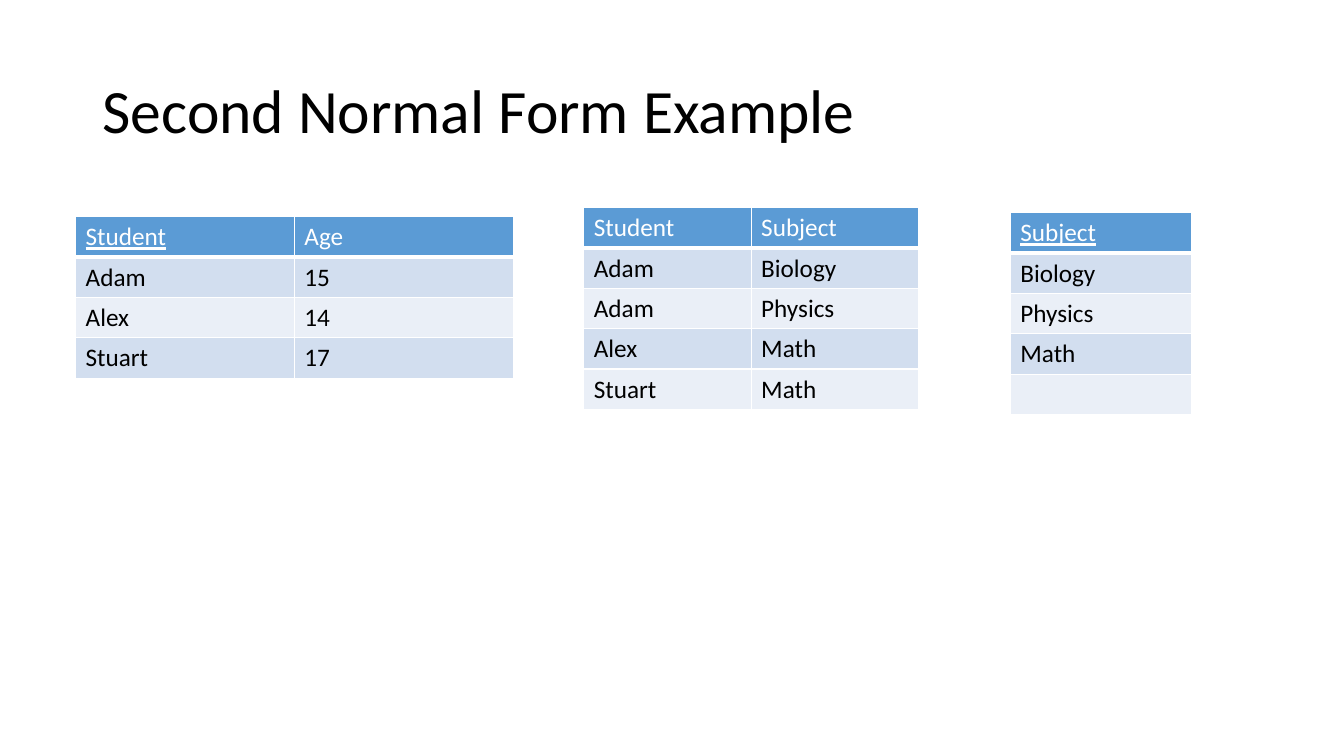
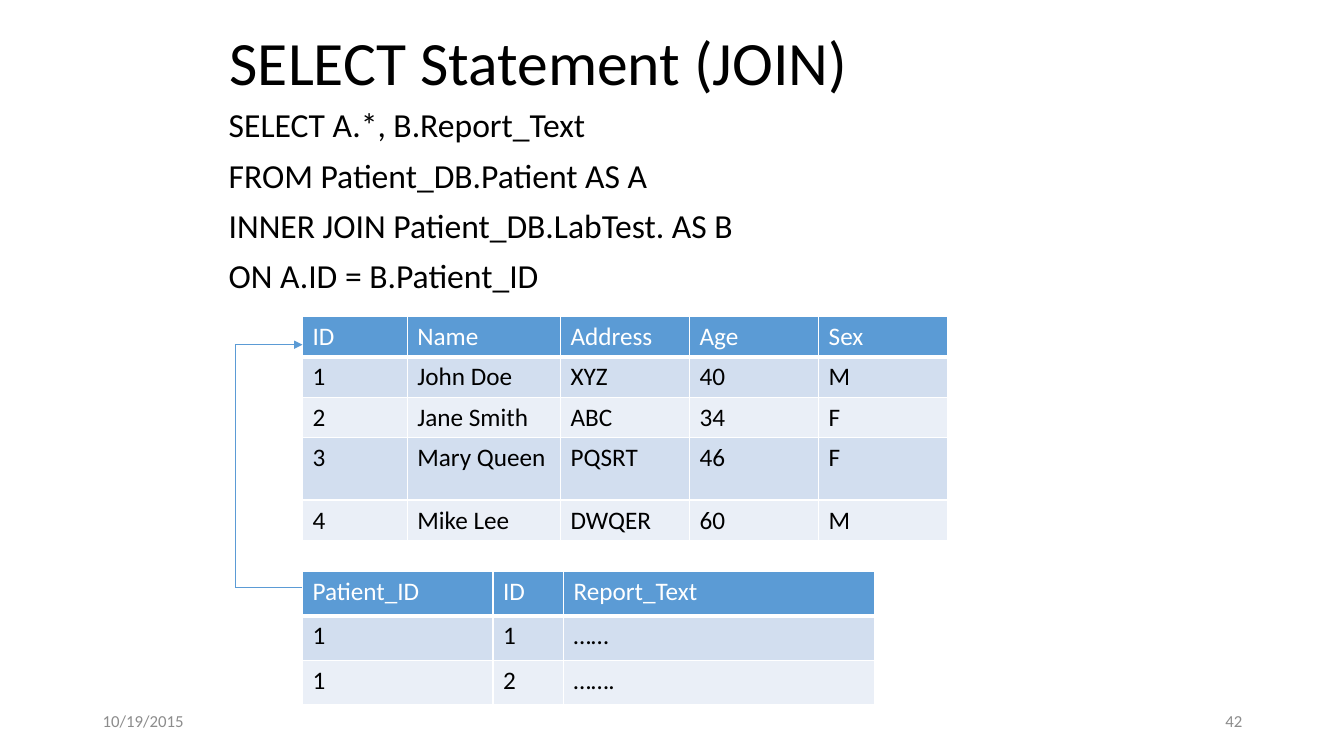
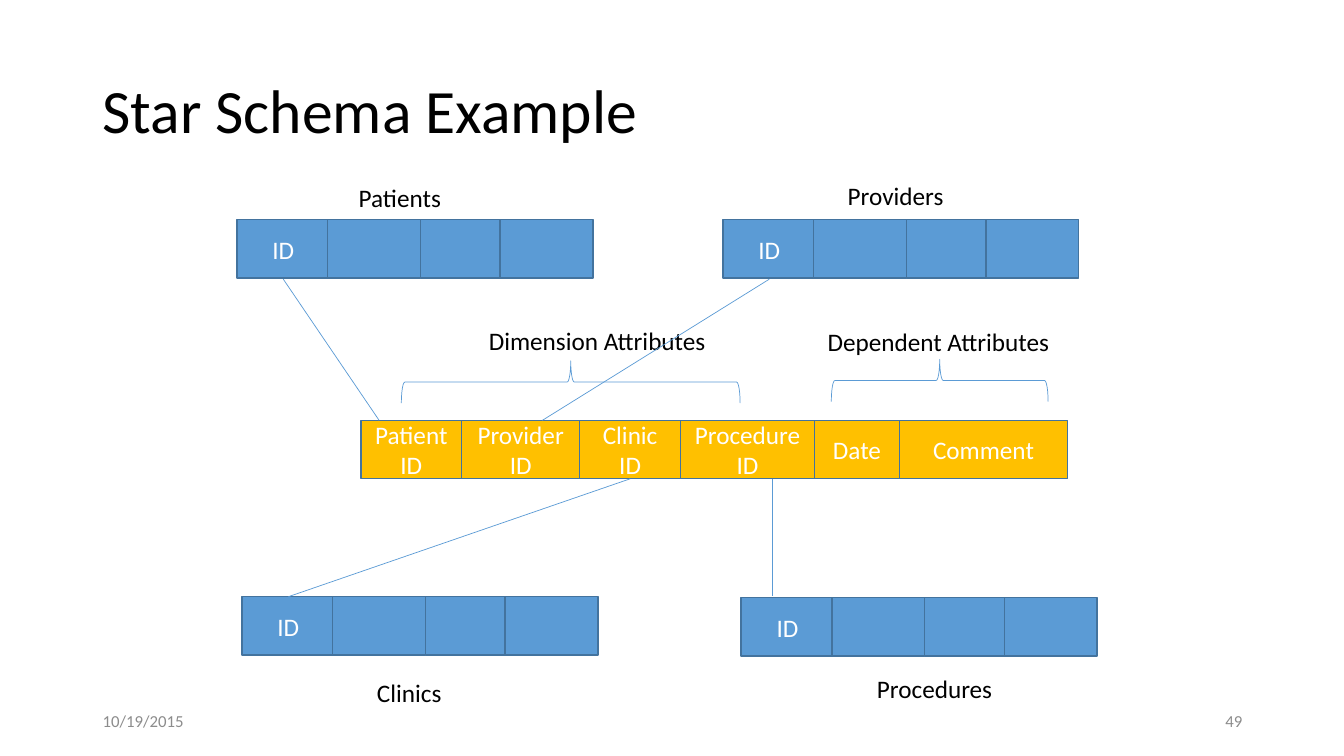
from itertools import accumulate, pairwise

from lxml.etree import SubElement
from pptx import Presentation
from pptx.dml.color import RGBColor
from pptx.enum.shapes import MSO_CONNECTOR as Connector, MSO_SHAPE as Preset
from pptx.enum.text import MSO_ANCHOR as Anchor, PP_ALIGN as Align
from pptx.oxml.ns import qn
from pptx.util import Emu, Pt

# Shared style: 100 px to the inch
SCALE = 9144
FONT = "Calibri"
BLACK, WHITE, GREY = "000000", "FFFFFF", "8C8C8C"
BLUE, DARK_BLUE, GOLD = "5B9BD5", "43739E", "FFC000"
BANDS = ("D2DEEF", "EAEFF7")
DATE = "10/19/2015"
TITLE_AREA = (92, 40, 1150, 145)
CELL_HEIGHT = 58
DIMENSION_OFFSETS = (0, 90, 182, 261)
DIMENSION_CELL_WIDTH = 92


def px(*lengths):
    return [Emu(length * SCALE) for length in lengths]


def color(value):
    return RGBColor.from_string(value)


def add_run(paragraph, text, size, ink, underline=False):
    run = paragraph.add_run()
    run.text = text
    font = run.font
    font.name, font.size, font.bold = FONT, Pt(size), False
    font.underline = underline
    font.color.rgb = color(ink)


def add_text(slide, area, lines, size=18, ink=BLACK, anchor=Anchor.TOP,
             align=Align.LEFT, spacing=1.0, before=0, wrap=True):
    frame = slide.shapes.add_textbox(*px(*area)).text_frame
    frame.word_wrap = wrap
    frame.vertical_anchor = anchor
    for index, line in enumerate(lines):
        paragraph = frame.add_paragraph() if index else frame.paragraphs[0]
        paragraph.alignment = align
        paragraph.line_spacing = spacing
        paragraph.space_before = Pt(before)
        add_run(paragraph, line, size, ink)


def add_title(slide, text, area=TITLE_AREA):
    add_text(slide, area, [text], size=44, anchor=Anchor.MIDDLE, spacing=0.9)


def add_footer(slide, number):
    for left, text, align in ((92, DATE, Align.LEFT), (942, number, Align.RIGHT)):
        add_text(slide, (left, 695, 300, 40), [text], size=12, ink=GREY,
                 anchor=Anchor.MIDDLE, align=align)


def add_label(slide, left, top, width, text):
    add_text(slide, (left, top, width, 40), [text], wrap=False)


# Tables: blue header, banded rows, white rules
def set_borders(cell, bottom):
    properties = cell._tc.get_or_add_tcPr()
    for side, width in (("L", 1), ("R", 1), ("T", 1), ("B", bottom)):
        line = SubElement(properties, qn(f"a:ln{side}"), w=str(Pt(width)))
        fill = SubElement(line, qn("a:solidFill"))
        SubElement(fill, qn("a:srgbClr"), val=WHITE)


def add_table(slide, left, top, widths, heights, rows, anchor=Anchor.TOP, key=None):
    """Draw a table; the header equal to key is underlined."""
    frame = slide.shapes.add_table(len(rows), len(widths),
                                   *px(left, top, sum(widths), sum(heights)))
    table = frame.table
    for column, width in zip(table.columns, px(*widths)):
        column.width = width
    for row, height in zip(table.rows, px(*heights)):
        row.height = height
    for row_index, texts in enumerate(rows):
        header = row_index == 0
        for column_index, text in enumerate(texts):
            cell = table.cell(row_index, column_index)
            cell.vertical_anchor = anchor
            set_borders(cell, 3 if header else 1)
            cell.fill.solid()
            cell.fill.fore_color.rgb = color(BLUE if header else BANDS[(row_index - 1) % 2])
            if text:
                add_run(cell.text_frame.paragraphs[0], text, 18,
                        WHITE if header else BLACK, header and text == key)


# Diagram parts
def add_line(slide, start, end, arrow=False):
    connector = slide.shapes.add_connector(Connector.STRAIGHT, *px(*start, *end))
    connector.line.color.rgb = color(BLUE)
    connector.line.width = Pt(0.5)
    if arrow:
        SubElement(connector.line._get_or_add_ln(), qn("a:tailEnd"), type="triangle")
    SubElement(connector._element.spPr, qn("a:effectLst"))


def add_field(group, area, fill, text=""):
    shape = group.shapes.add_shape(Preset.RECTANGLE, *px(*area))
    shape.shadow.inherit = False
    shape.fill.solid()
    shape.fill.fore_color.rgb = color(fill)
    shape.line.color.rgb = color(DARK_BLUE)
    shape.line.width = Pt(1)
    if text:
        frame = shape.text_frame
        frame.word_wrap = True
        frame.vertical_anchor = Anchor.MIDDLE
        frame.paragraphs[0].alignment = Align.CENTER
        add_run(frame.paragraphs[0], text, 18, WHITE)


def add_dimension(slide, left, top):
    group = slide.shapes.add_group_shape()
    for index, offset in enumerate(DIMENSION_OFFSETS):
        add_field(group, (left + offset, top, DIMENSION_CELL_WIDTH, CELL_HEIGHT),
                  BLUE, "" if index else "ID")


def add_facts(slide, left, top, fields):
    group = slide.shapes.add_group_shape()
    lefts = accumulate((width for _, width in fields), initial=left)
    for (name, width), field_left in zip(fields, lefts):
        add_field(group, (field_left, top, width, CELL_HEIGHT), GOLD, name)


def add_brace(slide, area):
    brace = slide.shapes.add_shape(Preset.LEFT_BRACE, *px(*area))
    brace.rotation = 90
    brace.shadow.inherit = False
    brace.fill.background()
    brace.line.color.rgb = color(BLUE)
    brace.line.width = Pt(0.5)


# Slides
def second_normal_form(slide):
    add_title(slide, "Second Normal Form Example")
    tables = (
        (75, 215, [217, 217], "Student",
         [("Student", "Age"), ("Adam", "15"), ("Alex", "14"), ("Stuart", "17")]),
        (579, 206, [166, 166], None,
         [("Student", "Subject"), ("Adam", "Biology"), ("Adam", "Physics"),
          ("Alex", "Math"), ("Stuart", "Math")]),
        (1002, 211, [180], "Subject",
         [("Subject",), ("Biology",), ("Physics",), ("Math",), ("",)]),
    )
    for left, top, widths, key, rows in tables:
        add_table(slide, left, top, widths, [40] * len(rows), rows, Anchor.MIDDLE, key)


def select_join(slide):
    add_title(slide, "SELECT Statement (JOIN)", (218, 3, 900, 125))
    add_text(slide, (217, 103, 900, 495),
             ["SELECT A.*, B.Report_Text", "FROM Patient_DB.Patient AS A",
              "INNER JOIN Patient_DB.LabTest. AS B", "ON A.ID = B.Patient_ID"],
             size=24, spacing=0.9, before=10)
    add_footer(slide, "42")
    add_table(slide, 300, 314, [104, 152, 128, 128, 128], [40, 40, 40, 62, 40],
              [("ID", "Name", "Address", "Age", "Sex"),
               ("1", "John Doe", "XYZ", "40", "M"),
               ("2", "Jane Smith", "ABC", "34", "F"),
               ("3", "Mary Queen", "PQSRT", "46", "F"),
               ("4", "Mike Lee", "DWQER", "60", "M")])
    add_table(slide, 300, 567, [189, 70, 308], [44] * 3,
              [("Patient_ID", "ID", "Report_Text"), ("1", "1", "……"), ("1", "2", "…….")])
    # Key link from Patient_ID up to ID
    corners = [(300, 583), (233, 583), (233, 342), (300, 342)]
    for start, end in pairwise(corners):
        add_line(slide, start, end, arrow=end == corners[-1])


def star_schema(slide):
    add_title(slide, "Star Schema Example")
    add_facts(slide, 358, 417,
              [("Patient ID", 100), ("Provider ID", 117), ("Clinic ID", 100),
               ("Procedure ID", 133), ("Date", 84), ("Comment", 167)])
    add_brace(slide, (545, 211, 42, 336))
    add_brace(slide, (911, 270, 42, 215))
    for left, top in ((235, 218), (735, 593), (240, 592), (717, 218)):
        add_dimension(slide, left, top)
    for label in ((475, 318, 238, "Dimension Attributes"),
                  (811, 319, 243, "Dependent Attributes"),
                  (346, 176, 103, "Patients"), (831, 174, 116, "Providers"),
                  (364, 667, 85, "Clinics"), (860, 663, 136, "Procedures")):
        add_label(slide, *label)
    for start, end in (((281, 277), (376, 417)), ((763, 277), (538, 417)),
                       ((766, 591), (766, 475)), ((286, 592), (625, 475))):
        add_line(slide, start, end)
    add_footer(slide, "49")


def main():
    presentation = Presentation()
    presentation.slide_width, presentation.slide_height = px(1333, 750)
    blank = presentation.slide_layouts[6]
    for build in (second_normal_form, select_join, star_schema):
        build(presentation.slides.add_slide(blank))
    presentation.save("out.pptx")


if __name__ == "__main__":
    main()
